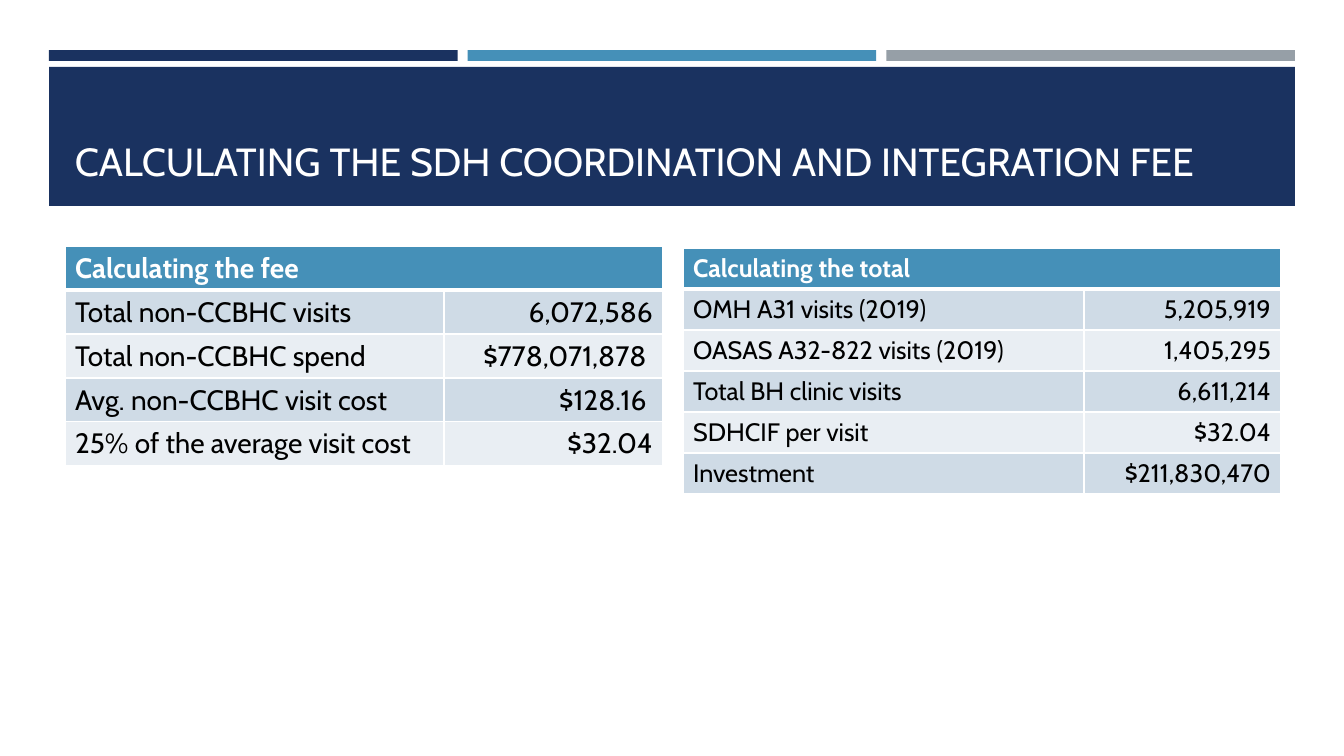
from dataclasses import dataclass

from lxml import etree
from pptx import Presentation, util as u
from pptx.dml.color import RGBColor
from pptx.enum import shapes, text
from pptx.oxml.ns import qn

# Content: lengths in px
TITLE = "CALCULATING THE SDH COORDINATION AND INTEGRATION FEE"
TABLES = [
    {
        "left": 65, "top": 246, "columns": (379, 219), "row_height": 44, "size": 20,
        "header": "Calculating the fee",
        "rows": [
            ("Total non-CCBHC visits", "6,072,586"),
            ("Total non-CCBHC spend", "$778,071,878 "),
            ("Avg. non-CCBHC visit cost", "$128.16 "),
            ("25% of the average visit cost", "$32.04"),
        ],
    },
    {
        "left": 683, "top": 248, "columns": (401, 197), "row_height": 41, "size": 18,
        "header": "Calculating the total",
        "rows": [
            ("OMH A31 visits (2019)", "5,205,919"),
            ("OASAS A32-822 visits (2019)", "1,405,295"),
            ("Total BH clinic visits", "6,611,214"),
            ("SDHCIF per visit", "$32.04"),
            ("Investment", "$211,830,470"),
        ],
    },
]


@dataclass(frozen=True)
class Theme:
    font: str = "Cabin"
    title_size: int = 28
    navy: str = "1A3260"
    blue: str = "4590B8"
    gray: str = "969FA7"
    row_fills: tuple = ("CFDBE6", "E9EEF3")
    white: str = "FFFFFF"
    black: str = "000000"


THEME = Theme()
SLIDE_SIZE = (1344, 756)
BAND = (49, 67, 1246, 139)
TITLE_BOX = (65, 81, 1215, 108)
BAR_TOP, BAR_HEIGHT, BAR_GAP = 50, 11, 10
EMU_PER_PX = 914400 / 100.8


def px(length):
    return u.Emu(round(length * EMU_PER_PX))


def style_text(paragraph, size, color, bold=False):
    font = paragraph.font
    font.name, font.size, font.bold = THEME.font, u.Pt(size), bold
    font.color.rgb = RGBColor.from_string(color)


def add_block(slide, box, color):
    shape = slide.shapes.add_shape(shapes.MSO_SHAPE.RECTANGLE, *map(px, box))
    shape.shadow.inherit = False
    shape.fill.solid()
    shape.fill.fore_color.rgb = RGBColor.from_string(color)
    shape.line.fill.background()


def set_borders(cell, **widths):
    properties = cell._tc.get_or_add_tcPr()
    for side in "LRTB":
        line = etree.SubElement(properties, qn(f"a:ln{side}"), w=str(u.Pt(widths.get(side, 1))))
        fill = etree.SubElement(line, qn("a:solidFill"))
        etree.SubElement(fill, qn("a:srgbClr"), val=THEME.white)


def add_data_table(slide, data):
    rows = [(data["header"], "")] + data["rows"]
    widths, row_height = data["columns"], data["row_height"]
    frame = slide.shapes.add_table(
        len(rows), len(widths), px(data["left"]), px(data["top"]),
        px(sum(widths)), px(row_height * len(rows)))
    table = frame.table
    for column, width in zip(table.columns, widths):
        column.width = px(width)
    for r, values in enumerate(rows):
        table.rows[r].height = px(row_height)
        is_header = r == 0
        for c, value in enumerate(values):
            cell = table.cell(r, c)
            set_borders(cell, T=3 if r == 1 else 1, B=3 if is_header else 1)
            cell.fill.solid()
            color = THEME.blue if is_header else THEME.row_fills[(r - 1) % 2]
            cell.fill.fore_color.rgb = RGBColor.from_string(color)
            cell.text = value
            paragraph = cell.text_frame.paragraphs[0]
            paragraph.alignment = text.PP_ALIGN.RIGHT if c else text.PP_ALIGN.LEFT
            style_text(paragraph, data["size"], THEME.white if is_header else THEME.black, is_header)
    table.cell(0, 0).merge(table.cell(0, len(widths) - 1))


def main():
    presentation = Presentation()
    presentation.slide_width, presentation.slide_height = map(px, SLIDE_SIZE)
    slide = presentation.slides.add_slide(presentation.slide_layouts[6])

    # Three accent bars spread evenly over the title band
    bar_colors = (THEME.navy, THEME.blue, THEME.gray)
    band_left, _, band_width, _ = BAND
    bar_width = (band_width - BAR_GAP * (len(bar_colors) - 1)) / len(bar_colors)
    for i, color in enumerate(bar_colors):
        left = band_left + i * (bar_width + BAR_GAP)
        add_block(slide, (left, BAR_TOP, bar_width, BAR_HEIGHT), color)

    # Title band and title
    add_block(slide, BAND, THEME.navy)
    title_frame = slide.shapes.add_textbox(*map(px, TITLE_BOX)).text_frame
    title_frame.word_wrap = True
    title_frame.vertical_anchor = text.MSO_ANCHOR.BOTTOM
    title_frame.text = TITLE
    style_text(title_frame.paragraphs[0], THEME.title_size, THEME.white)

    # Fee and total tables
    for data in TABLES:
        add_data_table(slide, data)

    presentation.save("out.pptx")


if __name__ == "__main__":
    main()
